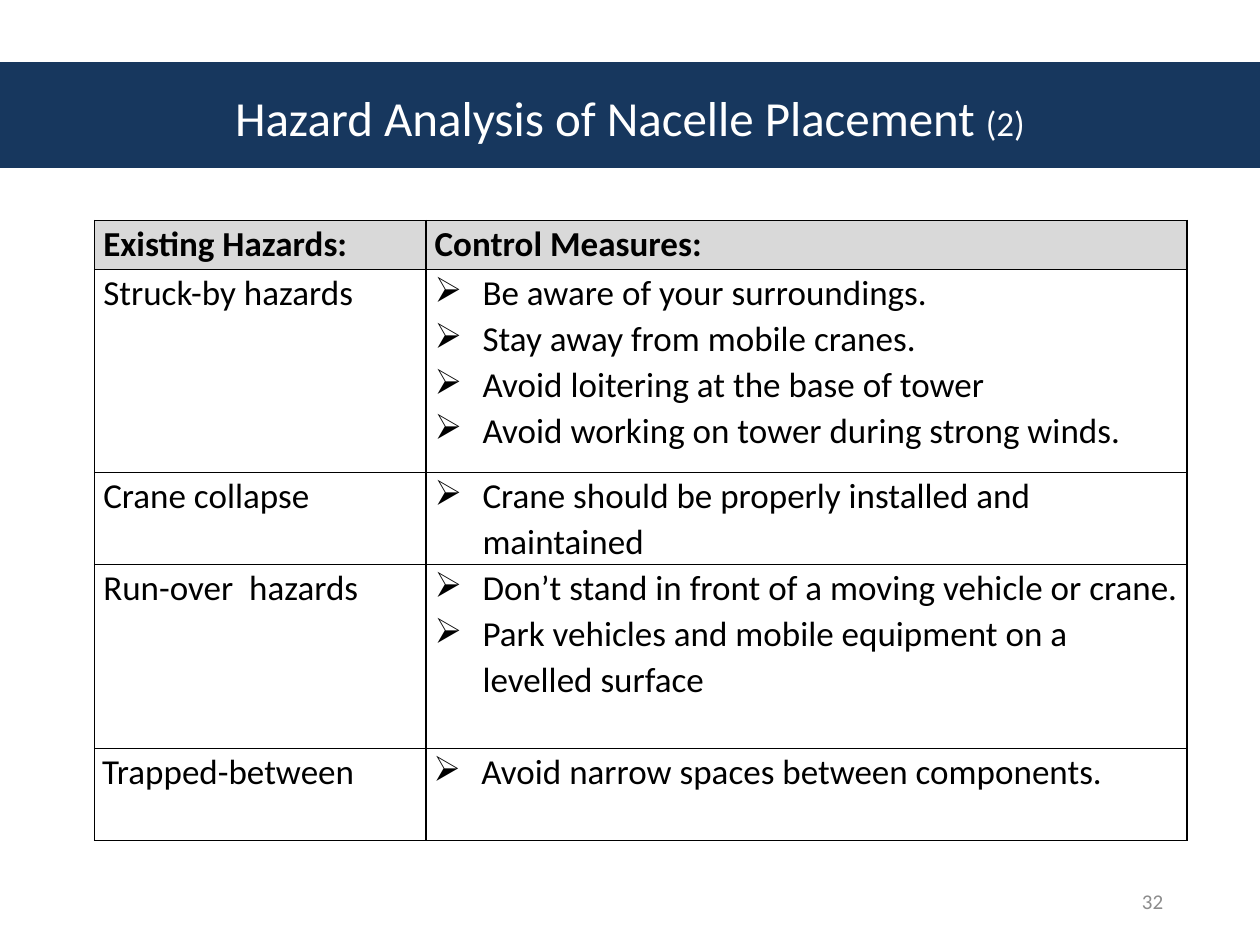
import pptx
import pptx.dml.color
import pptx.enum.shapes
import pptx.enum.text
import pptx.oxml.ns
import pptx.util
from lxml import etree
from pptx.util import Inches, Pt

RGBColor = pptx.dml.color.RGBColor
Align = pptx.enum.text.PP_ALIGN
NAVY = RGBColor(0x17, 0x37, 0x5E)
WHITE = RGBColor(0xFF, 0xFF, 0xFF)
BLACK = RGBColor(0, 0, 0)
HEADER_GREY = RGBColor(0xD9, 0xD9, 0xD9)
NUMBER_GREY = RGBColor(0x8C, 0x8C, 0x8C)

WIDTH, HEIGHT = Inches(10), Inches(7.5)
COLUMN_WIDTHS = (2.63, 6.04)
ROW_HEIGHTS = (0.39, 1.61, 0.73, 1.46, 0.73)
CELL_MARGINS = (0.07, 0.07, 0.07, 0.07, 0.06)
BULLET_INDENT = Inches(0.38)

HEADINGS = ("Existing Hazards:", "Control Measures:")
HAZARDS = (
    ("Struck-by hazards", (
        "Be aware of your surroundings.",
        "Stay away from mobile cranes.",
        "Avoid loitering at the base of tower",
        "Avoid working on tower during strong winds.",
    )),
    ("Crane collapse", (
        "Crane should be properly installed and maintained",
    )),
    ("Run-over  hazards", (
        "Don’t stand in front of a moving vehicle or crane.",
        "Park vehicles and mobile equipment on a levelled surface",
    )),
    ("Trapped-between", (
        "Avoid narrow spaces between components.",
    )),
)


def add_child(parent, tag, **attributes):
    child = etree.SubElement(parent, pptx.oxml.ns.qn(tag))
    for name, value in attributes.items():
        child.set(name, str(value))
    return child


def add_text(paragraph, text, size=20, color=BLACK, bold=False, align=Align.LEFT):
    paragraph.alignment = align
    run = paragraph.add_run()
    run.text = text
    run.font.name = "Calibri"
    run.font.size = Pt(size)
    run.font.bold = bold
    run.font.color.rgb = color


def add_text_box(slide, left, top, width, height):
    """Add a middle-anchored text box, placed in inches, and return its paragraph."""
    box = slide.shapes.add_textbox(*map(Inches, (left, top, width, height)))
    box.text_frame.word_wrap = True
    box.text_frame.vertical_anchor = pptx.enum.text.MSO_ANCHOR.MIDDLE
    return box.text_frame.paragraphs[0]


def add_title_band(slide):
    band = slide.shapes.add_shape(
        pptx.enum.shapes.MSO_SHAPE.RECTANGLE, 0, Inches(0.5), WIDTH, Inches(0.83))
    band.shadow.inherit = False
    band.fill.solid()
    band.fill.fore_color.rgb = NAVY
    band.line.color.rgb = NAVY
    band.line.width = Pt(0.75)


def add_bullet(paragraph):
    properties = paragraph._p.get_or_add_pPr()
    properties.set("marL", str(BULLET_INDENT))
    properties.set("indent", str(-BULLET_INDENT))
    add_child(properties, "a:buChar", char="➢")


def style_cell(cell, margin, fill=None):
    cell.margin_left = cell.margin_right = Inches(margin)
    cell.margin_top = cell.margin_bottom = 0
    properties = cell._tc.get_or_add_tcPr()
    for side in ("a:lnL", "a:lnR", "a:lnT", "a:lnB"):
        border = add_child(properties, side, w=Pt(1))
        add_child(add_child(border, "a:solidFill"), "a:srgbClr", val=BLACK)
    if fill is None:
        cell.fill.background()
    else:
        cell.fill.solid()
        cell.fill.fore_color.rgb = fill


def fill_cell(cell, lines, bold=False, bulleted=False):
    frame = cell.text_frame
    for index, line in enumerate(lines):
        paragraph = frame.add_paragraph() if index else frame.paragraphs[0]
        paragraph.line_spacing = 1.07
        if bulleted:
            add_bullet(paragraph)
        add_text(paragraph, line, bold=bold)


def add_hazard_table(slide):
    table = slide.shapes.add_table(
        len(ROW_HEIGHTS), len(COLUMN_WIDTHS), Inches(0.75), Inches(1.75),
        Inches(sum(COLUMN_WIDTHS)), Inches(sum(ROW_HEIGHTS))).table
    table.first_row = table.horz_banding = False
    for column, width in zip(table.columns, COLUMN_WIDTHS):
        column.width = Inches(width)
    for index, (row, height) in enumerate(zip(table.rows, ROW_HEIGHTS)):
        row.height = Inches(height)
        for cell in row.cells:
            style_cell(cell, CELL_MARGINS[index], None if index else HEADER_GREY)
    for column, heading in enumerate(HEADINGS):
        fill_cell(table.cell(0, column), [heading], bold=True)
    for row, (hazard, measures) in enumerate(HAZARDS, start=1):
        fill_cell(table.cell(row, 0), [hazard])
        fill_cell(table.cell(row, 1), measures, bulleted=True)


def main():
    presentation = pptx.Presentation()
    presentation.slide_width, presentation.slide_height = WIDTH, HEIGHT
    slide = presentation.slides.add_slide(presentation.slide_layouts[6])
    add_title_band(slide)
    title = add_text_box(slide, 0.5, 0.3, 9, 1.25)
    add_text(title, "Hazard Analysis of Nacelle Placement ", size=28,
             color=WHITE, align=Align.CENTER)
    add_text(title, "(2)", color=WHITE, align=Align.CENTER)
    add_hazard_table(slide)
    number = add_text_box(slide, 7, 6.95, 2.33, 0.4)
    add_text(number, "32", size=12, color=NUMBER_GREY, align=Align.RIGHT)
    presentation.save("out.pptx")


if __name__ == "__main__":
    main()
